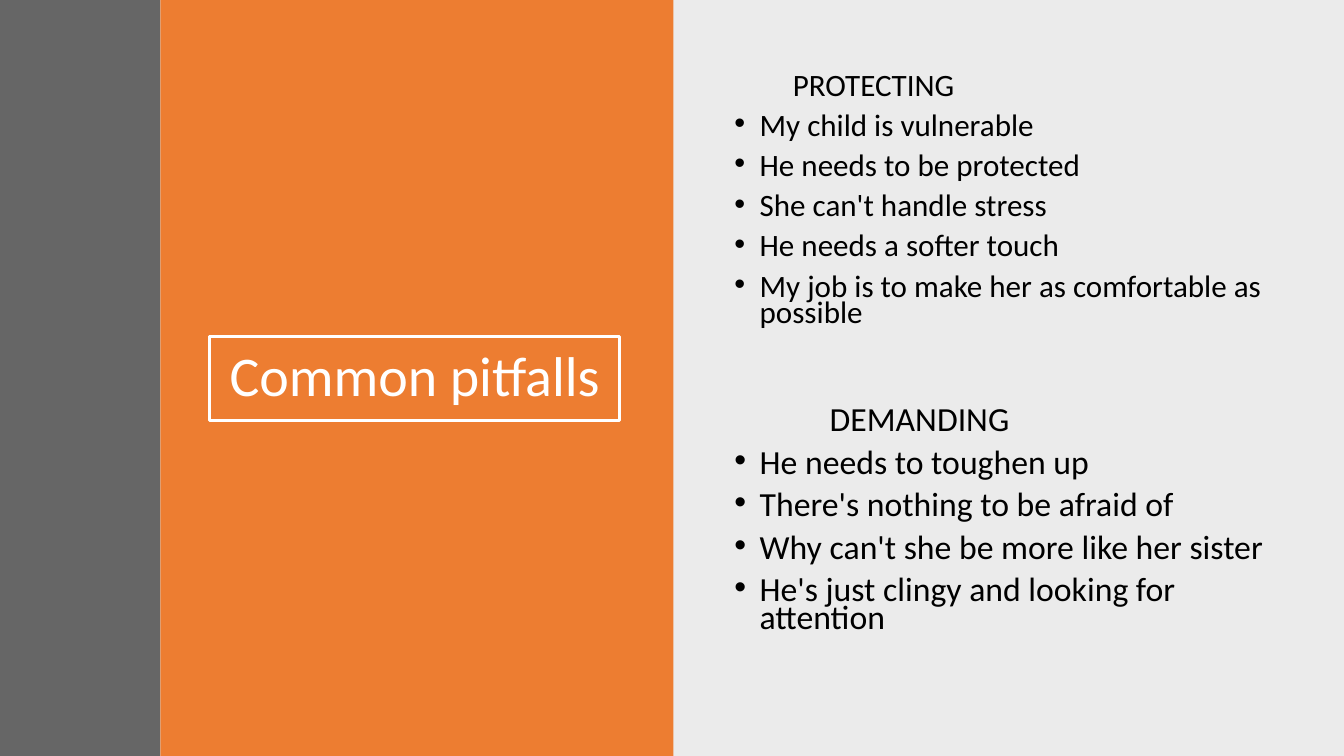
from dataclasses import dataclass

from lxml import etree
from pptx import Presentation
from pptx.dml.color import RGBColor
from pptx.enum.shapes import MSO_SHAPE
from pptx.enum.text import MSO_ANCHOR, PP_ALIGN
from pptx.oxml.ns import qn
from pptx.shapes.autoshape import Shape
from pptx.slide import Slide
from pptx.util import Cm, Pt

RECTANGLE = MSO_SHAPE.RECTANGLE
MIDDLE = MSO_ANCHOR.MIDDLE
CENTER = PP_ALIGN.CENTER

SLIDE_WIDTH = 33.87
SLIDE_HEIGHT = 19.05
BULLET_INDENT = Cm(0.635)


@dataclass(frozen=True)
class Theme:
    font: str = "Calibri"
    black: RGBColor = RGBColor(0x00, 0x00, 0x00)
    white: RGBColor = RGBColor(0xFF, 0xFF, 0xFF)
    orange: RGBColor = RGBColor(0xED, 0x7D, 0x31)
    gray: RGBColor = RGBColor(0x40, 0x40, 0x40)
    title_size: float = 40
    protecting_size: float = 22.2
    demanding_size: float = 24.1


THEME = Theme()


@dataclass(frozen=True)
class Panel:
    left: float
    width: float
    color: RGBColor
    opacity: int = 100


@dataclass(frozen=True)
class PitfallList:
    top: float
    heading: str
    heading_indent: float
    size: float
    statements: tuple[str, ...]


PANELS = (
    Panel(16.94, 16.93, THEME.black, opacity=8),
    Panel(4.04, 12.93, THEME.orange),
    Panel(0, 4.04, THEME.gray, opacity=80),
)

PITFALL_LISTS = (
    PitfallList(
        1.78, "PROTECTING", 1.47, THEME.protecting_size,
        (
            "My child is vulnerable",
            "He needs to be protected",
            "She can't handle stress",
            "He needs a softer touch",
            "My job is to make her as comfortable as possible",
        ),
    ),
    PitfallList(
        10.19, "DEMANDING", 2.4, THEME.demanding_size,
        (
            "He needs to toughen up",
            "There's nothing to be afraid of",
            "Why can't she be more like her sister",
            "He's just clingy and looking for attention",
        ),
    ),
)


def add_rectangle(slide: Slide, left: float, top: float, width: float, height: float) -> Shape:
    shape = slide.shapes.add_shape(RECTANGLE, Cm(left), Cm(top), Cm(width), Cm(height))
    shape.shadow.inherit = False
    return shape


def add_panel(slide: Slide, panel: Panel) -> None:
    shape = add_rectangle(slide, panel.left, 0, panel.width, SLIDE_HEIGHT)
    shape.line.fill.background()
    shape.fill.solid()
    shape.fill.fore_color.rgb = panel.color
    if panel.opacity < 100:
        color = shape._element.spPr.find(qn("a:solidFill")).find(qn("a:srgbClr"))
        etree.SubElement(color, qn("a:alpha"), val=str(panel.opacity * 1000))


def add_title(slide: Slide, text: str) -> None:
    shape = add_rectangle(slide, 5.28, 8.48, 10.34, 2.11)
    shape.fill.background()
    shape.line.color.rgb = THEME.white
    shape.line.width = Pt(2)
    shape.text_frame.word_wrap = True
    shape.text_frame.vertical_anchor = MIDDLE
    paragraph = shape.text_frame.paragraphs[0]
    paragraph.text = text
    paragraph.alignment = CENTER
    paragraph.line_spacing = 0.9
    paragraph.font.name = THEME.font
    paragraph.font.size = Pt(THEME.title_size)
    paragraph.font.color.rgb = THEME.white


def add_pitfall_list(slide: Slide, pitfalls: PitfallList) -> None:
    box = slide.shapes.add_textbox(Cm(18.26), Cm(pitfalls.top), Cm(14.05), Cm(7.09))
    frame = box.text_frame
    frame.word_wrap = True
    frame.text = "\n".join((pitfalls.heading, *pitfalls.statements))
    for paragraph in frame.paragraphs:
        paragraph.line_spacing = 0.7
        paragraph.space_before = Pt(10)
        paragraph.font.name = THEME.font
        paragraph.font.size = Pt(pitfalls.size)
        paragraph.font.color.rgb = THEME.black

    heading, *statements = frame.paragraphs
    heading._p.get_or_add_pPr().set("marL", str(Cm(pitfalls.heading_indent)))
    for paragraph in statements:
        add_bullet(paragraph._p.get_or_add_pPr())


def add_bullet(properties: etree._Element) -> None:
    """Set a hanging indent and put the bullet ahead of the default run properties."""
    properties.set("marL", str(BULLET_INDENT))
    properties.set("indent", str(-BULLET_INDENT))
    default_run = properties.find(qn("a:defRPr"))
    for tag, attributes in (
        ("a:buFont", {"typeface": "Arial"}),
        ("a:buChar", {"char": "•"}),
    ):
        default_run.addprevious(etree.Element(qn(tag), attributes))


def main() -> None:
    presentation = Presentation()
    presentation.slide_width = Cm(SLIDE_WIDTH)
    presentation.slide_height = Cm(SLIDE_HEIGHT)
    slide = presentation.slides.add_slide(presentation.slide_layouts[6])
    for panel in PANELS:
        add_panel(slide, panel)
    add_title(slide, "Common pitfalls")
    for pitfalls in PITFALL_LISTS:
        add_pitfall_list(slide, pitfalls)
    presentation.save("out.pptx")


if __name__ == "__main__":
    main()
